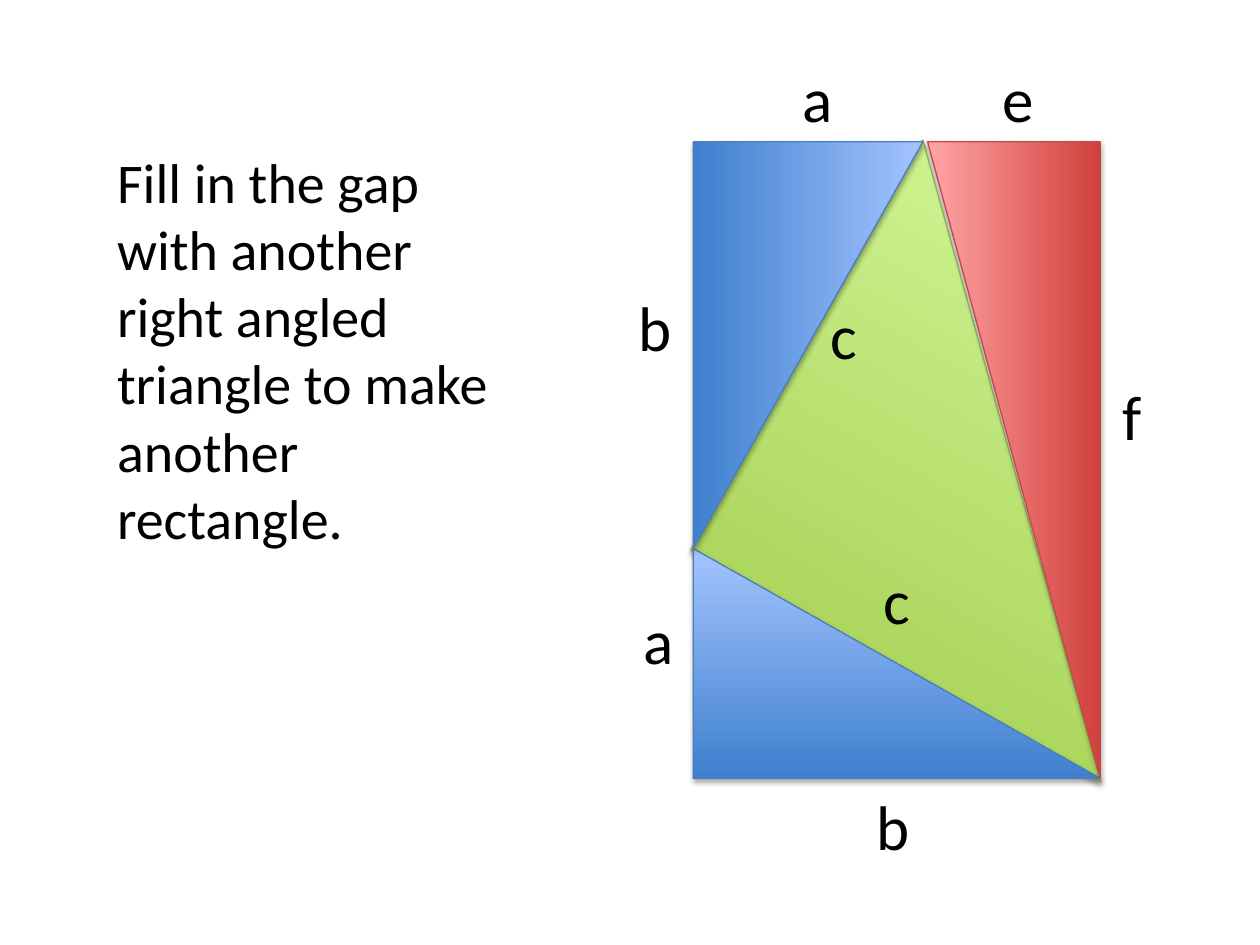
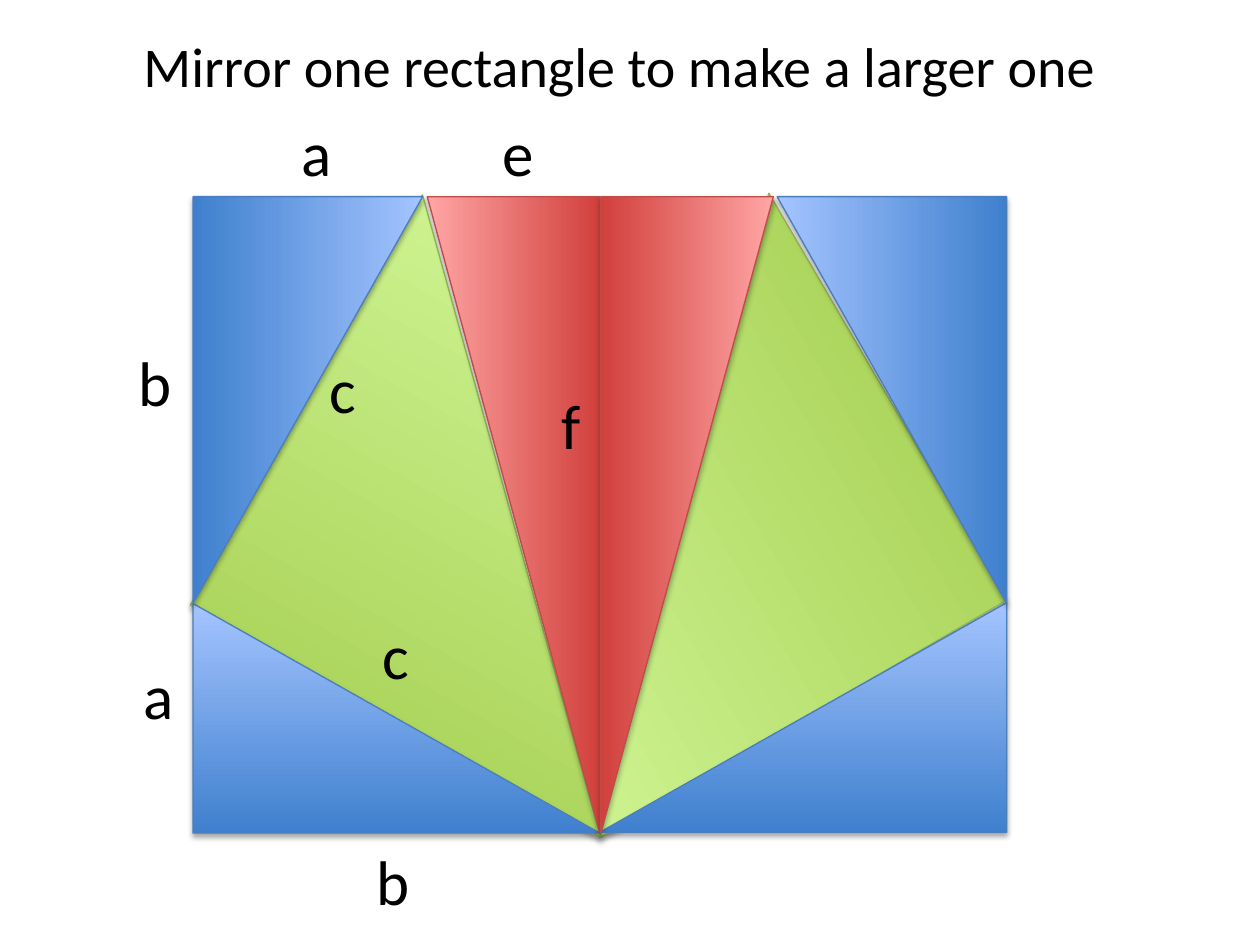
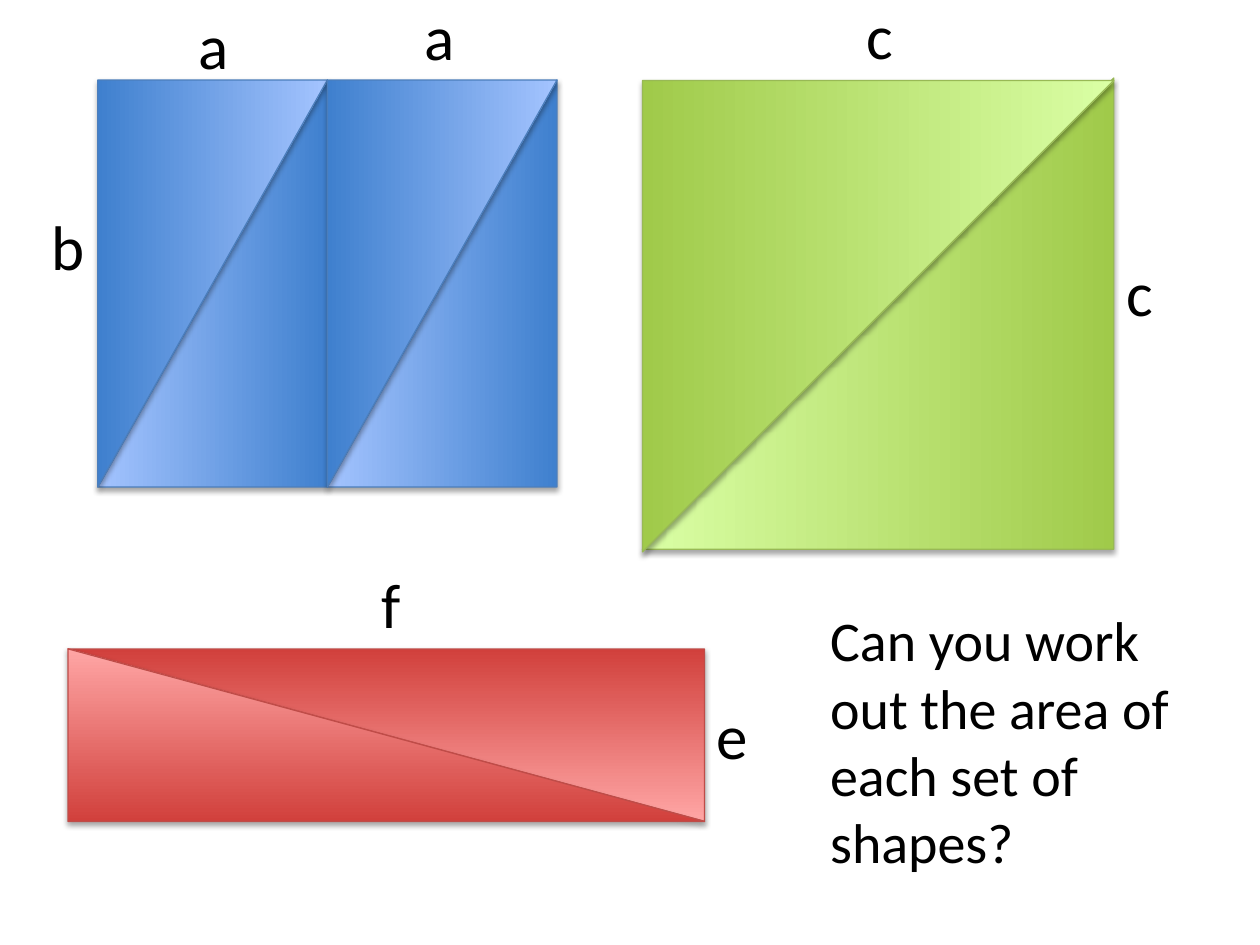
"""Builds three slides on rectangles made from right angled triangles."""
import pptx
import pptx.dml.color
import pptx.enum.shapes
import pptx.enum.text
import pptx.oxml
import pptx.util

Pt = pptx.util.Pt
RGBColor = pptx.dml.color.RGBColor

BLACK = RGBColor(0x00, 0x00, 0x00)
BLUE_DARK = RGBColor(0x3F, 0x80, 0xCE)
BLUE_LIGHT = RGBColor(0xA4, 0xC4, 0xFF)
BLUE_EDGE = RGBColor(0x4B, 0x7E, 0xBC)
GREEN_DARK = RGBColor(0xA0, 0xCA, 0x4A)
GREEN_LIGHT = RGBColor(0xDA, 0xFF, 0xA5)
GREEN_EDGE = RGBColor(0x98, 0xB9, 0x55)
RED_DARK = RGBColor(0xD1, 0x40, 0x3C)
RED_LIGHT = RGBColor(0xFF, 0xA6, 0xA5)
RED_EDGE = RGBColor(0xBF, 0x4C, 0x48)

A, B, C, E = 131.2, 232.5, 269.3, 98.6
F = A + B

BLUE = (B, A, BLUE_DARK, BLUE_LIGHT, BLUE_EDGE)
GREEN = (C, C, GREEN_DARK, GREEN_LIGHT, GREEN_EDGE)
RED = (F, E, RED_DARK, RED_LIGHT, RED_EDGE)

LETTER_WIDTHS = {"a": 31.7, "b": 33.8, "c": 30.2, "e": 33.8, "f": 25.9}
LETTER_HEIGHT = 51
SHADOW = (
    '<a:outerShdw xmlns:a="http://schemas.openxmlformats.org/drawingml/2006/main" '
    'blurRad="40000" dist="23000" dir="5400000" rotWithShape="0">'
    '<a:srgbClr val="000000"><a:alpha val="35000"/></a:srgbClr></a:outerShdw>'
)


def add_triangle(slide, kind, centre_x, centre_y, turn=0, flips=""):
    """Add a right angled triangle around its centre point."""
    width, height, dark, light, edge = kind
    triangle = slide.shapes.add_shape(
        pptx.enum.shapes.MSO_SHAPE.RIGHT_TRIANGLE,
        Pt(centre_x - width / 2), Pt(centre_y - height / 2), Pt(width), Pt(height))
    triangle.rotation = turn
    properties = triangle._element.spPr
    for axis in flips:
        properties.xfrm.set("flip" + axis, "1")
    triangle.fill.gradient()
    triangle.fill.gradient_angle = 90
    for stop, colour, position in zip(triangle.fill.gradient_stops, (dark, light), (0, 1)):
        stop.color.rgb = colour
        stop.position = position
    triangle.line.color.rgb = edge
    triangle.line.width = Pt(0.75)
    triangle.shadow.inherit = False
    effects = properties.find(pptx.oxml.ns.qn("a:effectLst"))
    effects.append(pptx.oxml.parse_xml(SHADOW))


def add_words(slide, words, left, top, width=None, height=LETTER_HEIGHT):
    """Add a side letter, or a wrapped sentence when a width is given."""
    box = slide.shapes.add_textbox(
        Pt(left), Pt(top), Pt(width or LETTER_WIDTHS[words]), Pt(height))
    frame = box.text_frame
    frame_format = {
        "word_wrap": width is not None,
        "auto_size": pptx.enum.text.MSO_AUTO_SIZE.SHAPE_TO_FIT_TEXT,
        "text": words,
    }
    for name, value in frame_format.items():
        setattr(frame, name, value)
    font = frame.paragraphs[0].runs[0].font
    for name, value in {"name": "Calibri", "size": Pt(32 if width else 36)}.items():
        setattr(font, name, value)
    font.color.rgb = BLACK


deck = pptx.Presentation()
deck.slide_width, deck.slide_height = Pt(720), Pt(540)
gap_slide, mirror_slide, area_slide = [
    deck.slides.add_slide(deck.slide_layouts[6]) for _ in range(3)]

rectangle_triangles = [
    (GREEN, 182, 182.5, 29.5, ""),
    (BLUE, B / 2, B + A / 2, 0, ""),
    (BLUE, A / 2, B / 2, 90, ""),
    (RED, B - E / 2, F / 2, 270, "H"),
]
mirrored_triangles = [
    (GREEN, 280.7, 182.2, 59.7, "HV"),
    (BLUE, B * 1.5, B + A / 2 - 0.5, 0, "H"),
    (BLUE, 2 * B - A / 2, B / 2, 270, "H"),
    (RED, B + E / 2 + 0.5, F / 2, 90, ""),
]
rectangle_letters = [
    ("a", -35.5, 259), ("b", -38.4, 80.3), ("c", 101.3, 236.5), ("c", 71.1, 84.6),
    ("a", 55.2, -50.8), ("b", 97.7, 365.4), ("e", 169.7, -50.8),
]

rectangles = [
    (gap_slide, 396.2, 81, rectangle_triangles, ("f", 238.1, 131.4)),
    (mirror_slide, 110.3, 112.4,
     mirrored_triangles[:1] + rectangle_triangles + mirrored_triangles[1:],
     ("f", 203.6, 105)),
]
for slide, left, top, triangles, height_letter in rectangles:
    for kind, x, y, turn, flips in triangles:
        add_triangle(slide, kind, left + x, top + y, turn, flips)
    for letter, x, y in rectangle_letters + [height_letter]:
        add_words(slide, letter, left + x, top + y)

add_words(
    gap_slide,
    "Fill in the gap with another right angled triangle to make another rectangle.",
    59.8, 80.6, 241.9, 239.8)
add_words(mirror_slide, "Mirror one rectangle to make a larger one", 74.9, 14.4, 595.4, 46)

add_triangle(area_slide, GREEN, 501.8, 179.3, 90, "HV")
add_triangle(area_slide, GREEN, 501.8, 180.7, 90)
for column in range(2):
    for turn in (270, 90):
        add_triangle(area_slide, BLUE, 121.5 + column * A, 162, turn)
for turn in (180, 0):
    add_triangle(area_slide, RED, 220.7, 420.1, turn)

area_letters = [
    ("a", 235.4, -5), ("b", 22.3, 115.2), ("c", 488.2, -5.8), ("c", 636.5, 141.1),
    ("a", 106.6, 0), ("e", 402.5, 394.6), ("f", 211, 319.7),
]
for letter, left, top in area_letters:
    add_words(area_slide, letter, left, top)
add_words(area_slide, "Can you work out the area of each set of shapes?", 467.3, 342.7, 226.1, 162.7)

deck.save("out.pptx")
